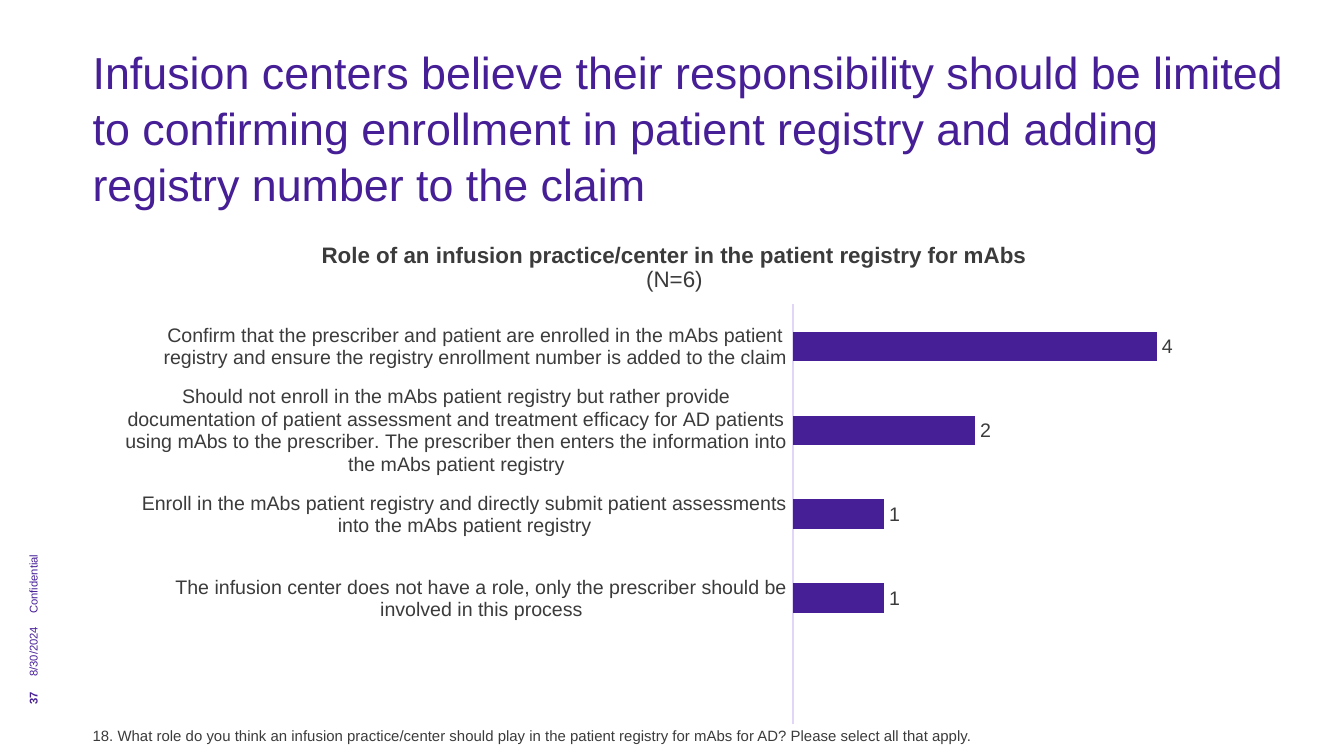
"""Build the slide on the role of infusion centers in the patient registry."""
import pptx
import pptx.chart.data
import pptx.dml.color
import pptx.enum.chart
import pptx.enum.text
import pptx.oxml
import pptx.oxml.ns
import pptx.util
from pptx.util import Cm

PURPLE = "461E96"
LILAC = "E1D6F7"
GRAY = "3B3B3B"
TITLE = (
    "Infusion centers believe their responsibility should be limited to confirming "
    "enrollment in patient registry and adding registry number to the claim"
)
FOOTNOTE = (
    "18. What role do you think an infusion practice/center should play in the patient "
    "registry for mAbs for AD? Please select all that apply."
)
ROLES = [
    ("Confirm that the prescriber and patient are enrolled in the mAbs patient registry "
     "and ensure the registry enrollment number is added to the claim", 4),
    ("Should not enroll in the mAbs patient registry but rather provide documentation of "
     "patient assessment and treatment efficacy for AD patients using mAbs to the "
     "prescriber. The prescriber then enters the information into the mAbs patient "
     "registry", 2),
    ("Enroll in the mAbs patient registry and directly submit patient assessments into "
     "the mAbs patient registry", 1),
    ("The infusion center does not have a role, only the prescriber should be involved "
     "in this process", 1),
    ("", None),
]
MARGIN_LABELS = [
    ("8/30/2024", 12.79, 1.19, False),
    ("Confidential", 11.6, 4.85, False),
    ("37", 13.31, 0.51, True),
]


def color(value):
    return pptx.dml.color.RGBColor.from_string(value)


def set_font(font, size, value, bold=False):
    font.name = "Arial"
    font.size = pptx.util.Pt(size)
    font.bold = bold
    font.color.rgb = color(value)


def write_text(shape, text, size, value, bold=False, anchor="TOP"):
    frame = shape.text_frame
    frame.word_wrap = True
    frame.auto_size = pptx.enum.text.MSO_AUTO_SIZE.NONE
    frame.vertical_anchor = pptx.enum.text.MSO_ANCHOR[anchor]
    frame.margin_left = frame.margin_right = frame.margin_top = frame.margin_bottom = 0
    frame.text = text
    paragraph = frame.paragraphs[0]
    paragraph.alignment = pptx.enum.text.PP_ALIGN.LEFT
    set_font(paragraph.font, size, value, bold)
    return paragraph


def add_title(slide):
    title = slide.shapes.title
    title.left, title.top, title.width, title.height = Cm(1.75), Cm(0.81), Cm(22.91), Cm(1.09)
    write_text(title, TITLE, 24, PURPLE).line_spacing = 1.04


def add_margin_label(slide, text, bottom, length, bold):
    center_x, height = 0.65, 0.3
    label = slide.shapes.add_textbox(
        Cm(center_x - length / 2), Cm(bottom - length / 2 - height / 2), Cm(length), Cm(height))
    label.rotation = 270
    write_text(label, text, 6, PURPLE, bold)


def set_layout(parent, index, **values):
    """Place a chart part by fractions of the chart's size."""
    old_layout = parent.find(pptx.oxml.ns.qn("c:layout"))
    if old_layout is not None:
        parent.remove(old_layout)
    target = '<c:layoutTarget val="inner"/>' if "w" in values else ""
    modes = "".join(f'<c:{name}Mode val="edge"/>' for name in "xy")
    sizes = "".join(f'<c:{name} val="{value}"/>' for name, value in values.items())
    parent.insert(index, pptx.oxml.parse_xml(
        f'<c:layout {pptx.oxml.ns.nsdecls("c")}><c:manualLayout>'
        f"{target}{modes}{sizes}</c:manualLayout></c:layout>"))


def add_chart_title(chart):
    chart.has_title = True
    frame = chart.chart_title.text_frame
    frame.text = "Role of an infusion practice/center in the patient registry for mAbs\n(N=6)"
    for paragraph, bold in zip(frame.paragraphs, (True, False)):
        set_font(paragraph.font, 12, GRAY, bold)
        set_font(paragraph.runs[0].font, 12, GRAY, bold)
    chart.chart_title.include_in_layout = False


def add_role_chart(slide):
    data = pptx.chart.data.CategoryChartData()
    data.categories = [role for role, _ in ROLES]
    data.add_series("Series 1", [count for _, count in ROLES])
    chart = slide.shapes.add_chart(
        pptx.enum.chart.XL_CHART_TYPE.BAR_CLUSTERED,
        Cm(2.24), Cm(4.09), Cm(20.9), Cm(9.8), data).chart
    set_font(chart.font, 10, PURPLE)
    chart.has_legend = False
    add_chart_title(chart)

    roles = chart.category_axis
    roles.reverse_order = True
    roles.major_tick_mark = pptx.enum.chart.XL_TICK_MARK.NONE
    roles.format.line.color.rgb = color(LILAC)
    roles.format.line.width = pptx.util.Pt(0.75)
    set_font(roles.tick_labels.font, 10.5, GRAY)

    counts = chart.value_axis
    counts.visible = False
    counts.has_major_gridlines = False
    counts.minimum_scale, counts.maximum_scale = 0, 4.5

    plot = chart.plots[0]
    plot.gap_width = 182
    plot.vary_by_categories = False
    series = plot.series[0]
    series.format.fill.solid()
    series.format.fill.fore_color.rgb = color(PURPLE)
    labels = series.data_labels
    labels.show_value = True
    labels.position = pptx.enum.chart.XL_LABEL_POSITION.OUTSIDE_END
    set_font(labels.font, 10.5, GRAY)

    chart_element = chart.element.find(pptx.oxml.ns.qn("c:chart"))
    set_layout(chart_element.find(pptx.oxml.ns.qn("c:title")), 1, x=0.18, y=0.04)
    set_layout(chart_element.find(pptx.oxml.ns.qn("c:plotArea")), 0,
               x=0.61, y=0.17, w=0.37, h=0.81)


def add_footnote(slide):
    footnote = slide.shapes.add_textbox(Cm(1.75), Cm(13.77), Cm(22.86), Cm(0.3))
    write_text(footnote, FOOTNOTE, 8, GRAY, anchor="BOTTOM")


def main():
    presentation = pptx.Presentation()
    presentation.slide_width, presentation.slide_height = Cm(25.4), Cm(14.29)
    slide = presentation.slides.add_slide(presentation.slide_layouts[5])
    add_title(slide)
    for label in MARGIN_LABELS:
        add_margin_label(slide, *label)
    add_footnote(slide)
    add_role_chart(slide)
    presentation.save("out.pptx")


if __name__ == "__main__":
    main()
